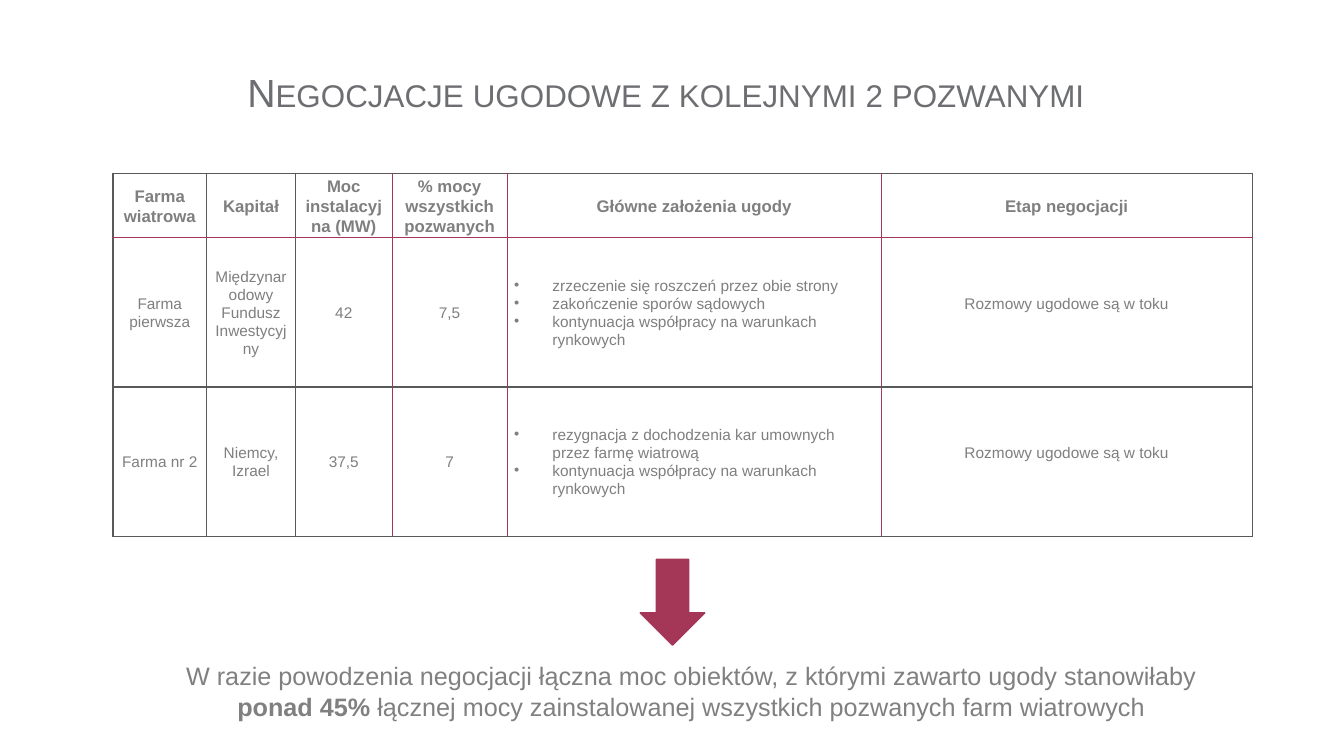
import lxml.etree
import pptx
import pptx.dml.color
import pptx.enum.shapes
import pptx.enum.text
import pptx.oxml.ns
import pptx.util

Inches = pptx.util.Inches
Pt = pptx.util.Pt
RGBColor = pptx.dml.color.RGBColor
qn = pptx.oxml.ns.qn
CENTER = pptx.enum.text.PP_ALIGN.CENTER
LEFT = pptx.enum.text.PP_ALIGN.LEFT
MIDDLE = pptx.enum.text.MSO_ANCHOR.MIDDLE

TITLE = "Negocjacje ugodowe z kolejnymi 2 pozwanymi"
HEADER = ["Farma wiatrowa", "Kapitał", "Moc instalacyjna (MW)",
          "% mocy wszystkich pozwanych", "Główne założenia ugody",
          "Etap negocjacji"]
FARMS = [
    ["Farma pierwsza", "Międzynarodowy Fundusz Inwestycyjny", "42", "7,5",
     ["zrzeczenie się roszczeń przez obie strony",
      "zakończenie sporów sądowych",
      "kontynuacja współpracy na warunkach rynkowych"],
     "Rozmowy ugodowe są w toku"],
    ["Farma nr 2", "Niemcy, Izrael", "37,5", "7",
     ["rezygnacja z dochodzenia kar umownych przez farmę wiatrową",
      "kontynuacja współpracy na warunkach rynkowych"],
     "Rozmowy ugodowe są w toku"],
]
SUMMARY = [
    [("W razie powodzenia negocjacji łączna moc obiektów, "
      "z którymi zawarto ugody stanowiłaby", False)],
    [("ponad 45%", True),
     (" łącznej mocy zainstalowanej wszystkich pozwanych farm wiatrowych", False)],
]

TITLE_GREY = RGBColor(0x6D, 0x6E, 0x71)
SUMMARY_GREY = RGBColor(0x80, 0x80, 0x80)
TABLE_GREY = RGBColor(0x7F, 0x7F, 0x7F)
BORDER_GREY = RGBColor(0x59, 0x59, 0x59)
CRIMSON = RGBColor(0xA4, 0x37, 0x57)

COLUMNS = [0.93, 0.88, 0.96, 1.14, 3.71, 3.68]
ROWS = [0.64, 1.48, 1.48]
CRIMSON_COLUMN_EDGES = (3, 4, 5)
CRIMSON_ROW_EDGES = (1,)
STAGE_COLUMN = len(COLUMNS) - 1
INDENT = Inches(0.38)


def style(para, size, color, bold=None):
    para.alignment = CENTER
    para.font.name = "Arial"
    para.font.size = Pt(size)
    para.font.color.rgb = color
    para.font.bold = bold


def add_text(page, left, top, width, height):
    box = page.shapes.add_textbox(*map(Inches, (left, top, width, height)))
    box.text_frame.word_wrap = True
    box.text_frame.vertical_anchor = MIDDLE
    return box.text_frame


def add_bullet(para):
    para.alignment = LEFT
    properties = para._p.get_or_add_pPr()
    properties.set("marL", str(INDENT))
    properties.set("indent", str(-INDENT))
    bullet = lxml.etree.Element(qn("a:buChar"), char="•")
    properties.find(qn("a:defRPr")).addprevious(bullet)


def add_borders(cell, row, column):
    properties = cell._tc.get_or_add_tcPr()
    sides = [("a:lnL", column, CRIMSON_COLUMN_EDGES),
             ("a:lnR", column + 1, CRIMSON_COLUMN_EDGES),
             ("a:lnT", row, CRIMSON_ROW_EDGES),
             ("a:lnB", row + 1, CRIMSON_ROW_EDGES)]
    for place, (tag, edge, crimson_edges) in enumerate(sides):
        color = CRIMSON if edge in crimson_edges else BORDER_GREY
        line = lxml.etree.Element(qn(tag), w=str(Pt(1)))
        fill = lxml.etree.SubElement(line, qn("a:solidFill"))
        lxml.etree.SubElement(fill, qn("a:srgbClr"), val=str(color))
        properties.insert(place, line)


def fill_cell(cell, content, row, column):
    cell.vertical_anchor = MIDDLE
    cell.margin_left = cell.margin_right = Inches(0.07)
    cell.margin_top = Inches(0.01)
    cell.margin_bottom = Inches(0.18 if row and column == STAGE_COLUMN else 0)
    cell.fill.background()
    add_borders(cell, row, column)
    bulleted = isinstance(content, list)
    lines = content if bulleted else [content]
    cell.text_frame.text = "\n".join(lines)
    for para in cell.text_frame.paragraphs:
        style(para, 11 if row else 12, TABLE_GREY, row == 0)
        para.line_spacing = 1.05
        if bulleted:
            add_bullet(para)


def add_farm_table(page):
    frame = page.shapes.add_table(
        len(ROWS), len(COLUMNS), Inches(1.12), Inches(1.72),
        Inches(sum(COLUMNS)), Inches(sum(ROWS)))
    table = frame.table
    table.first_row = table.horz_banding = False
    for column, width in zip(table.columns, COLUMNS):
        column.width = Inches(width)
    for row, height in zip(table.rows, ROWS):
        row.height = Inches(height)
    for row, contents in enumerate([HEADER] + FARMS):
        for column, content in enumerate(contents):
            fill_cell(table.cell(row, column), content, row, column)


def main():
    deck = pptx.Presentation()
    deck.slide_width, deck.slide_height = Inches(13.33), Inches(7.5)
    page = deck.slides.add_slide(deck.slide_layouts[6])

    title = add_text(page, 0.57, 0.65, 12.07, 0.52).paragraphs[0]
    style(title, 28, TITLE_GREY)
    title.space_before = Pt(7.5)
    span = title.add_run()
    span.text = TITLE
    span._r.get_or_add_rPr().set("cap", "small")

    add_farm_table(page)

    arrow = page.shapes.add_shape(
        pptx.enum.shapes.MSO_SHAPE.DOWN_ARROW,
        Inches(6.35), Inches(5.55), Inches(0.64), Inches(0.85))
    arrow.shadow.inherit = False
    arrow.fill.solid()
    arrow.fill.fore_color.rgb = CRIMSON
    arrow.line.color.rgb = CRIMSON
    arrow.line.width = Pt(1)

    summary = add_text(page, 1.3, 6.5, 11.11, 0.71)
    summary.text = "\n" * (len(SUMMARY) - 1)
    for para, spans in zip(summary.paragraphs, SUMMARY):
        style(para, 18, SUMMARY_GREY)
        for text, bold in spans:
            span = para.add_run()
            span.text = text
            span.font.bold = bold

    deck.save("out.pptx")


if __name__ == "__main__":
    main()
